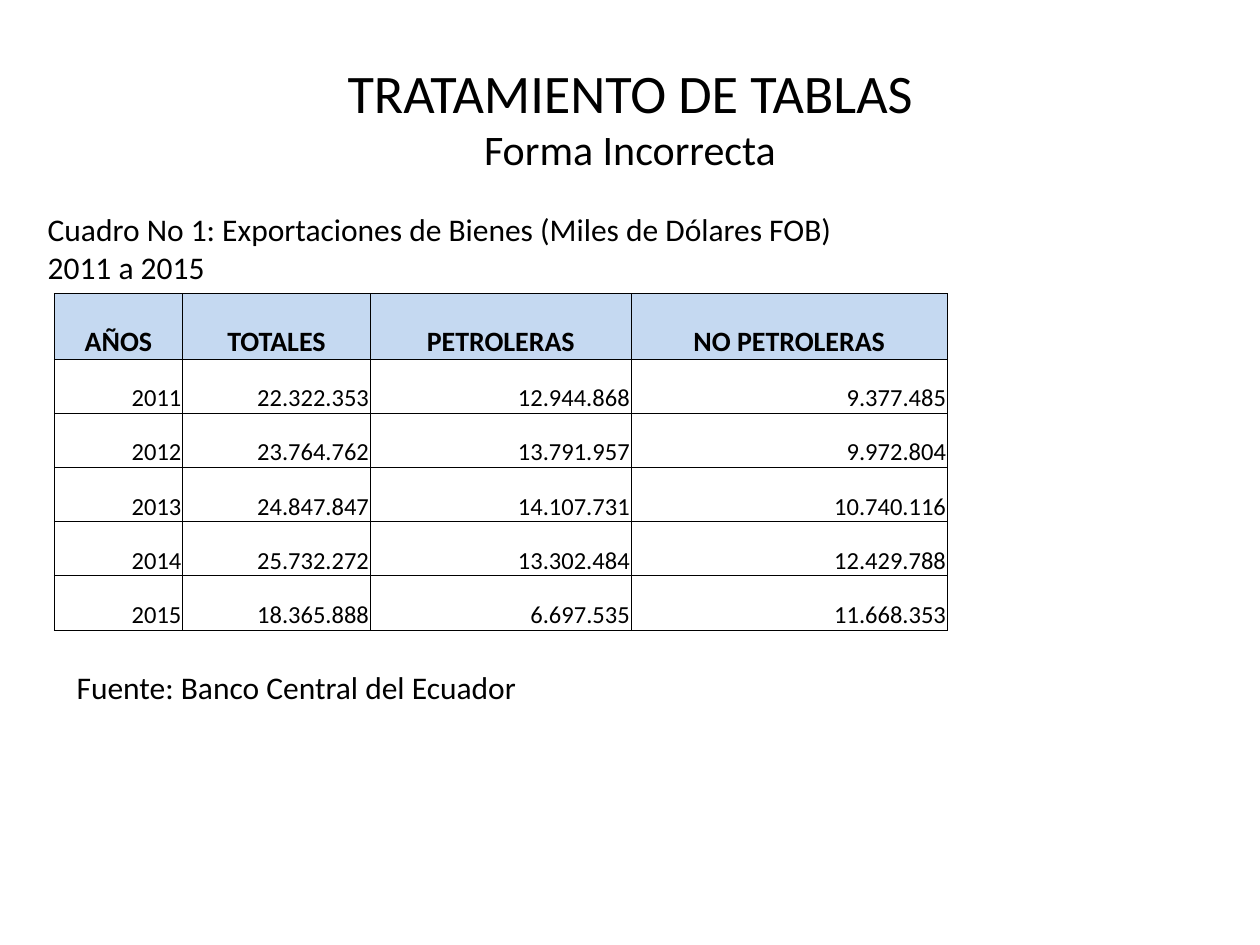
from dataclasses import dataclass

from lxml import etree
from pptx import Presentation
from pptx.dml.color import RGBColor
from pptx.enum import text
from pptx.oxml.ns import qn
from pptx.util import Inches, Pt

WIDTH, HEIGHT = 10, 7.5
FONT = "Calibri"
BLACK, HEADER_BLUE = "000000", "C5D9F1"
LEFT, CENTER, RIGHT = text.PP_ALIGN.LEFT, text.PP_ALIGN.CENTER, text.PP_ALIGN.RIGHT

HEADERS = ("AÑOS", "TOTALES", "PETROLERAS", "NO PETROLERAS")
EXPORTS = (
    ("2011", "22.322.353", "12.944.868", "9.377.485"),
    ("2012", "23.764.762", "13.791.957", "9.972.804"),
    ("2013", "24.847.847", "14.107.731", "10.740.116"),
    ("2014", "25.732.272", "13.302.484", "12.429.788"),
    ("2015", "18.365.888", "6.697.535", "11.668.353"),
)
COLUMN_WIDTHS = (1.02, 1.49, 2.07, 2.51)
HEADER_HEIGHT, ROW_HEIGHT = 0.52, 0.43


@dataclass(frozen=True)
class Area:
    """A rectangle in inches."""
    left: float
    top: float
    width: float
    height: float

    def lengths(self) -> tuple:
        return tuple(Inches(n) for n in (self.left, self.top, self.width, self.height))


@dataclass(frozen=True)
class Label:
    lines: tuple
    area: Area


TITLE_AREA = Area(WIDTH * 0.05, HEIGHT * 0.04, WIDTH * 0.9, 1.25)
TABLE_AREA = Area(0.43, 2.33, sum(COLUMN_WIDTHS),
                  HEADER_HEIGHT + ROW_HEIGHT * len(EXPORTS))
LABELS = (
    Label(("Cuadro No 1: Exportaciones de Bienes (Miles de Dólares FOB)", "2011 a 2015"),
          Area(0.28, 1.62, 7.09, 0.71)),
    Label(("Fuente: Banco Central del Ecuador",), Area(0.51, 5.25, 6.93, 0.4)),
)


def color(code: str) -> RGBColor:
    return RGBColor.from_string(code)


def write(para, words: str, *, size: float, bold: bool = False, align=LEFT) -> None:
    """Add a formatted span to a paragraph."""
    para.alignment = align
    span = para.add_run()
    span.text = words
    span.font.name, span.font.size, span.font.bold = FONT, Pt(size), bold
    span.font.color.rgb = color(BLACK)


def add_title(page) -> None:
    title = page.shapes.title
    title.left, title.top, title.width, title.height = TITLE_AREA.lengths()
    frame = title.text_frame
    frame.auto_size = text.MSO_AUTO_SIZE.NONE
    frame.vertical_anchor = text.MSO_ANCHOR.MIDDLE
    para = frame.paragraphs[0]
    write(para, "TRATAMIENTO DE TABLAS", size=31, align=CENTER)
    para.add_line_break()
    write(para, "Forma Incorrecta", size=24, align=CENTER)


def add_label(page, label: Label) -> None:
    frame = page.shapes.add_textbox(*label.area.lengths()).text_frame
    frame.word_wrap = True
    frame.auto_size = text.MSO_AUTO_SIZE.SHAPE_TO_FIT_TEXT
    for index, line in enumerate(label.lines):
        para = frame.add_paragraph() if index else frame.paragraphs[0]
        write(para, line, size=18)


def add_borders(cell, width: float = 0.5) -> None:
    """Outline a cell; borders must come before the fill in its XML."""
    props = cell._tc.get_or_add_tcPr()
    for index, side in enumerate(("lnL", "lnR", "lnT", "lnB")):
        line = etree.Element(qn(f"a:{side}"), w=str(Pt(width)))
        fill = etree.SubElement(line, qn("a:solidFill"))
        etree.SubElement(fill, qn("a:srgbClr"), val=BLACK)
        props.insert(index, line)


def fill_cell(cell, words: str, *, header: bool) -> None:
    cell.margin_left = cell.margin_right = cell.margin_top = Inches(0.01)
    cell.margin_bottom = 0
    cell.vertical_anchor = text.MSO_ANCHOR.BOTTOM
    if header:
        cell.fill.solid()
        cell.fill.fore_color.rgb = color(HEADER_BLUE)
    else:
        cell.fill.background()
    add_borders(cell)
    write(cell.text_frame.paragraphs[0], words, size=16 if header else 14,
          bold=header, align=CENTER if header else RIGHT)


def add_export_table(page) -> None:
    rows = (HEADERS, *EXPORTS)
    table = page.shapes.add_table(len(rows), len(HEADERS), *TABLE_AREA.lengths()).table
    table.horz_banding = False
    for column, width in zip(table.columns, COLUMN_WIDTHS):
        column.width = Inches(width)
    for r, values in enumerate(rows):
        table.rows[r].height = Inches(ROW_HEIGHT if r else HEADER_HEIGHT)
        for c, words in enumerate(values):
            fill_cell(table.cell(r, c), words, header=r == 0)


def main() -> None:
    deck = Presentation()
    deck.slide_width, deck.slide_height = Inches(WIDTH), Inches(HEIGHT)
    page = deck.slides.add_slide(deck.slide_layouts.get_by_name("Title Only"))

    # Title, caption, table and source line
    add_title(page)
    caption, source = LABELS
    add_label(page, caption)
    add_export_table(page)
    add_label(page, source)

    deck.save("out.pptx")


if __name__ == "__main__":
    main()
